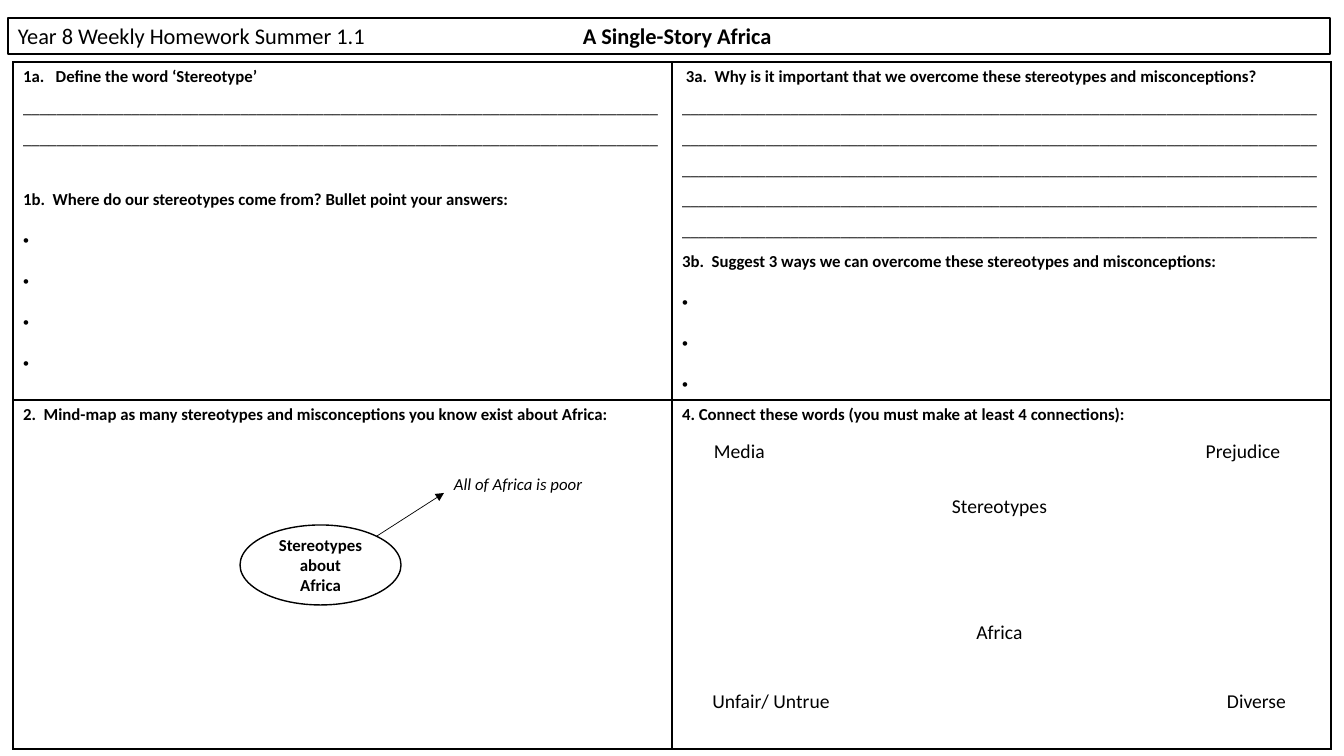
from lxml import etree
from pptx import Presentation
from pptx.dml.color import RGBColor
from pptx.enum.shapes import MSO_CONNECTOR, MSO_SHAPE
from pptx.enum.text import MSO_ANCHOR, PP_ALIGN
from pptx.oxml.ns import qn
from pptx.util import Pt

LEFT, CENTER = PP_ALIGN.LEFT, PP_ALIGN.CENTER
BOTTOM, MIDDLE, TOP = MSO_ANCHOR.BOTTOM, MSO_ANCHOR.MIDDLE, MSO_ANCHOR.TOP
RECTANGLE, OVAL = MSO_SHAPE.RECTANGLE, MSO_SHAPE.OVAL
STRAIGHT = MSO_CONNECTOR.STRAIGHT

EMU_PER_PX = 914400 / 100.8
BLACK, WHITE = "000000", "FFFFFF"
FONT = "Calibri"
RULE = "_" * 76
BULLET = " "

DEFINE = ["1a.   Define the word ‘Stereotype’"]
SOURCES = "1b.  Where do our stereotypes come from? Bullet point your answers:"
WHY = " 3a.  Why is it important that we overcome these stereotypes and misconceptions?"
SUGGEST = "3b.  Suggest 3 ways we can overcome these stereotypes and misconceptions:"
MIND_MAP = "2.  Mind-map as many stereotypes and misconceptions you know exist about Africa:"
CONNECT = "4. Connect these words (you must make at least 4 connections):"


def px(length):
    return round(length * EMU_PER_PX)


def color(hex_code):
    return RGBColor.from_string(hex_code)


def set_all(target, values):
    for name, value in values.items():
        setattr(target, name, value)


def write(paragraph, text, size, **font):
    run = paragraph.add_run()
    run.text = text
    set_all(run.font, {"name": FONT, "size": Pt(size), **font})
    run.font.color.rgb = color(BLACK)


def outlined_shape(slide, kind, box, anchor):
    shape = slide.shapes.add_shape(kind, *map(px, box))
    shape.shadow.inherit = False
    shape.line.color.rgb = color(BLACK)
    shape.line.width = Pt(1)
    set_all(shape.text_frame, {"word_wrap": True, "vertical_anchor": anchor})
    return shape


def label(slide, box, text, size, align, **font):
    frame = slide.shapes.add_textbox(*map(px, box)).text_frame
    set_all(frame, {"word_wrap": True, "vertical_anchor": TOP})
    frame.paragraphs[0].alignment = align
    write(frame.paragraphs[0], text, size, **font)


def heading_bar(slide, box):
    bar = outlined_shape(slide, RECTANGLE, box, BOTTOM)
    bar.fill.solid()
    bar.fill.fore_color.rgb = color(WHITE)
    heading = bar.text_frame.paragraphs[0]
    set_all(heading, {"alignment": LEFT, "line_spacing": 0.9})
    # Tab stop where the topic title begins
    stops = etree.SubElement(heading._p.get_or_add_pPr(), qn("a:tabLst"))
    etree.SubElement(stops, qn("a:tab"), pos=str(px(565)), algn="l")
    write(heading, "Year 8 Weekly Homework Summer 1.1\t", 16)
    write(heading, "A Single-Story Africa", 16, bold=True)


def add_bullet(paragraph):
    properties = paragraph._p.get_or_add_pPr()
    properties.set("marL", str(px(19)))
    properties.set("indent", str(-px(19)))
    etree.SubElement(properties, qn("a:buFont"), typeface="Arial")
    etree.SubElement(properties, qn("a:buChar"), char="•")


def border_cell(cell):
    properties = cell._tc.get_or_add_tcPr()
    for position, side in enumerate(("a:lnL", "a:lnR", "a:lnT", "a:lnB")):
        border = etree.Element(qn(side), w=str(Pt(1)))
        fill = etree.SubElement(border, qn("a:solidFill"))
        etree.SubElement(fill, qn("a:srgbClr"), val=BLACK)
        properties.insert(position, border)


def fill_cell(cell, lines):
    """Lines are (text, line spacing, space before in points)."""
    cell.fill.background()
    border_cell(cell)
    frame = cell.text_frame
    for number, (text, spacing, before) in enumerate(lines):
        paragraph = frame.add_paragraph() if number else frame.paragraphs[0]
        set_all(paragraph, {"line_spacing": spacing, "space_before": Pt(before)})
        if text == BULLET:
            add_bullet(paragraph)
        write(paragraph, text, 12, bold=text not in (RULE, BULLET))


def question_grid(slide, box, row_heights):
    grid = slide.shapes.add_table(2, 2, *map(px, box)).table
    set_all(grid, {"first_row": False, "horz_banding": False})
    for column in grid.columns:
        column.width = px(box[2] / 2)
    for row, height in zip(grid.rows, row_heights):
        row.height = px(height)

    rule, bullet = (RULE, 1.5, 0), (BULLET, 2.0, 0)
    questions = {
        (0, 0): [(DEFINE[0], 1.0, 0)] + [rule] * 2 + [(SOURCES, 1.5, 22)] + [bullet] * 4,
        (0, 1): [(WHY, 1.0, 0)] + [rule] * 5 + [(SUGGEST, 1.5, 0)] + [bullet] * 3,
        (1, 0): [(MIND_MAP, 1.0, 0)],
        (1, 1): [(CONNECT, 1.0, 0)],
    }
    for place, lines in questions.items():
        fill_cell(grid.cell(*place), lines)


def mind_map(slide, box):
    left, top = box[:2]
    # Central topic
    topic = outlined_shape(slide, OVAL, (left + 227, top + 125, 161, 80), MIDDLE)
    topic.fill.background()
    frame = topic.text_frame
    for paragraph, text in ((frame.paragraphs[0], "Stereotypes about"),
                            (frame.add_paragraph(), "Africa")):
        paragraph.alignment = CENTER
        write(paragraph, text, 12, bold=True)

    # Arrow to the example
    branch = slide.shapes.add_connector(
        STRAIGHT, px(left + 364), px(top + 136), px(left + 431), px(top + 93))
    branch.line.color.rgb = color(BLACK)
    branch.line.width = Pt(0.5)
    etree.SubElement(branch.line._get_or_add_ln(), qn("a:tailEnd"), type="triangle")
    etree.SubElement(branch._element.spPr, qn("a:effectLst"))
    label(slide, (left + 431, top + 69, 165, 30), "All of Africa is poor", 12, LEFT, italic=True)


def word_links(slide, box):
    left, top = box[:2]
    # Offsets from the panel corner, width and alignment
    for text, x, y, width, align in (
            ("Prejudice", 515, 34, 112, CENTER),
            ("Diverse", 540, 284, 89, CENTER),
            ("Media", 32, 34, 74, LEFT),
            ("Unfair/ Untrue", 17, 284, 164, CENTER),
            ("Africa", 271, 215, 113, CENTER),
            ("Stereotypes", 263, 89, 129, CENTER)):
        label(slide, (left + x, top + y, width, 34), text, 14, align)


def main():
    deck = Presentation()
    set_all(deck, {"slide_width": px(1344), "slide_height": px(756)})
    slide = deck.slides.add_slide(deck.slide_layouts[6])
    heading_bar(slide, (8, 18, 1322, 36))
    question_grid(slide, (13, 62, 1318, 687), (338, 349))
    mind_map(slide, (13, 400, 659, 349))
    word_links(slide, (672, 400, 659, 349))
    deck.save("out.pptx")


if __name__ == "__main__":
    main()
